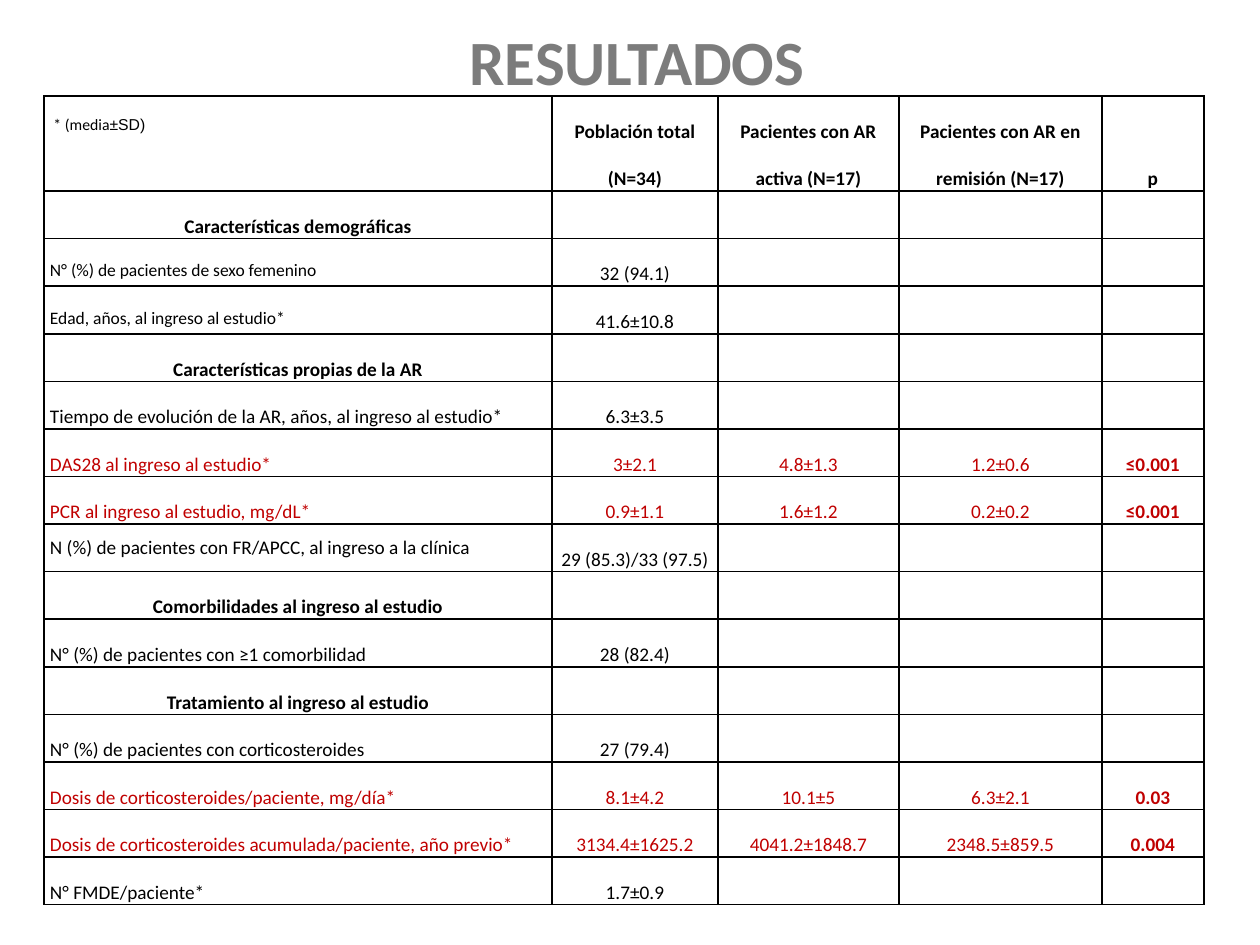
import dataclasses

import lxml.etree
import pptx
import pptx.dml.color
import pptx.enum.text
import pptx.oxml.ns
import pptx.util

ALIGN = pptx.enum.text.PP_ALIGN
ANCHOR = pptx.enum.text.MSO_ANCHOR
COLORS = {"title": "7C7C7C", "text": "000000", "key": "C00000", "line": "000000"}
SCALE = 914400 / 126
FONT = "Calibri"
COLS = [508, 166, 181, 203, 102]
HEAD_H, ROW_H = 66, 35


@dataclasses.dataclass
class Row:
    label: str
    values: tuple[str, ...] = ()
    key: bool = False
    size: int = 11
    space: float = 2

    @property
    def group(self) -> bool:
        return not self.values


HEADS = [
    ("Población total", "(N=34)"),
    ("Pacientes con AR", "activa (N=17)"),
    ("Pacientes con AR en remisión (N=17)",),
    ("p",),
]
ROWS = [
    Row("Características demográficas"),
    Row("N° (%) de pacientes de sexo femenino", ("32 (94.1)",), size=10),
    Row("Edad, años, al ingreso al estudio*", ("41.6±10.8",), size=10),
    Row("Características propias de la AR"),
    Row("Tiempo de evolución de la AR, años, al ingreso al estudio*", ("6.3±3.5",)),
    Row("DAS28 al ingreso al estudio*", ("3±2.1", "4.8±1.3", "1.2±0.6", "≤0.001"), key=True),
    Row("PCR al ingreso al estudio, mg/dL*", ("0.9±1.1", "1.6±1.2", "0.2±0.2", "≤0.001"), key=True),
    Row("N (%) de pacientes con FR/APCC, al ingreso a la clínica", ("29 (85.3)/33 (97.5)",), space=1.5),
    Row("Comorbilidades al ingreso al estudio"),
    Row("N° (%) de pacientes con ≥1 comorbilidad", ("28 (82.4)",)),
    Row("Tratamiento al ingreso al estudio"),
    Row("N° (%) de pacientes con corticosteroides", ("27 (79.4)",)),
    Row("Dosis de corticosteroides/paciente, mg/día*", ("8.1±4.2", "10.1±5", "6.3±2.1", "0.03"), key=True),
    Row("Dosis de corticosteroides acumulada/paciente, año previo*",
        ("3134.4±1625.2", "4041.2±1848.7", "2348.5±859.5", "0.004"), key=True),
    Row("N° FMDE/paciente*", ("1.7±0.9",)),
]


def px(n: int) -> pptx.util.Emu:
    return pptx.util.Emu(round(n * SCALE))


def add_run(para, text: str, size: int, color: str = "text", bold: bool = False, font: str = FONT) -> None:
    run = para.add_run()
    run.text = text
    run.font.name = font
    run.font.size = pptx.util.Pt(size)
    run.font.bold = bold
    run.font.color.rgb = pptx.dml.color.RGBColor.from_string(COLORS[color])


def add_para(cell, first: bool = True, align=ALIGN.CENTER, space: float = 2):
    frame = cell.text_frame
    para = frame.paragraphs[0] if first else frame.add_paragraph()
    para.alignment = align
    para.line_spacing = space
    return para


def style_cell(cell) -> None:
    """Set insets, a thin border on all sides and no fill."""
    cell.margin_left = cell.margin_right = px(6)
    cell.margin_top = cell.margin_bottom = 0
    props = cell._tc.get_or_add_tcPr()
    qn = pptx.oxml.ns.qn
    for side in ("lnL", "lnR", "lnT", "lnB"):
        line = lxml.etree.SubElement(props, qn(f"a:{side}"), w=str(pptx.util.Pt(1)))
        fill = lxml.etree.SubElement(line, qn("a:solidFill"))
        lxml.etree.SubElement(fill, qn("a:srgbClr"), val=COLORS["line"])
    cell.fill.background()


def add_title(slide) -> None:
    title = slide.shapes.title
    title.left, title.top, title.width, title.height = map(px, (94, -24, 1086, 179))
    frame = title.text_frame
    frame.auto_size = pptx.enum.text.MSO_AUTO_SIZE.NONE
    frame.vertical_anchor = ANCHOR.MIDDLE
    para = frame.paragraphs[0]
    para.alignment = ALIGN.CENTER
    para.line_spacing = 0.9
    add_run(para, "RESULTADOS", 36, "title", True)


def fill_head(table) -> None:
    note = add_para(table.cell(0, 0), align=ALIGN.JUSTIFY)
    add_run(note, " * (media", 9)
    add_run(note, "±SD)", 9, font="Arial")
    for c, lines in enumerate(HEADS, 1):
        for i, text in enumerate(lines):
            add_run(add_para(table.cell(0, c), i == 0), text, 11, bold=True)
    table.cell(0, len(HEADS)).vertical_anchor = ANCHOR.BOTTOM


def fill_row(table, r: int, row: Row) -> None:
    color = "key" if row.key else "text"
    align = ALIGN.CENTER if row.group else ALIGN.JUSTIFY
    para = add_para(table.cell(r, 0), align=align, space=row.space)
    add_run(para, row.label, row.size, color, row.group)
    for c, text in enumerate(row.values, 1):
        add_run(add_para(table.cell(r, c)), text, 11, color, c == len(HEADS))


def add_grid(slide) -> None:
    height = HEAD_H + ROW_H * len(ROWS)
    box = map(px, (44, 96, sum(COLS), height))
    table = slide.shapes.add_table(len(ROWS) + 1, len(COLS), *box).table
    table.first_row = table.horz_banding = False
    for col, width in zip(table.columns, COLS):
        col.width = px(width)
    for r, line in enumerate(table.rows):
        line.height = px(ROW_H if r else HEAD_H)
    for cell in table.iter_cells():
        style_cell(cell)
    fill_head(table)
    for r, row in enumerate(ROWS, 1):
        fill_row(table, r, row)


def main() -> None:
    deck = pptx.Presentation()
    deck.slide_width, deck.slide_height = px(1260), px(945)
    slide = deck.slides.add_slide(deck.slide_layouts[5])
    add_title(slide)
    add_grid(slide)
    deck.save("out.pptx")


if __name__ == "__main__":
    main()
